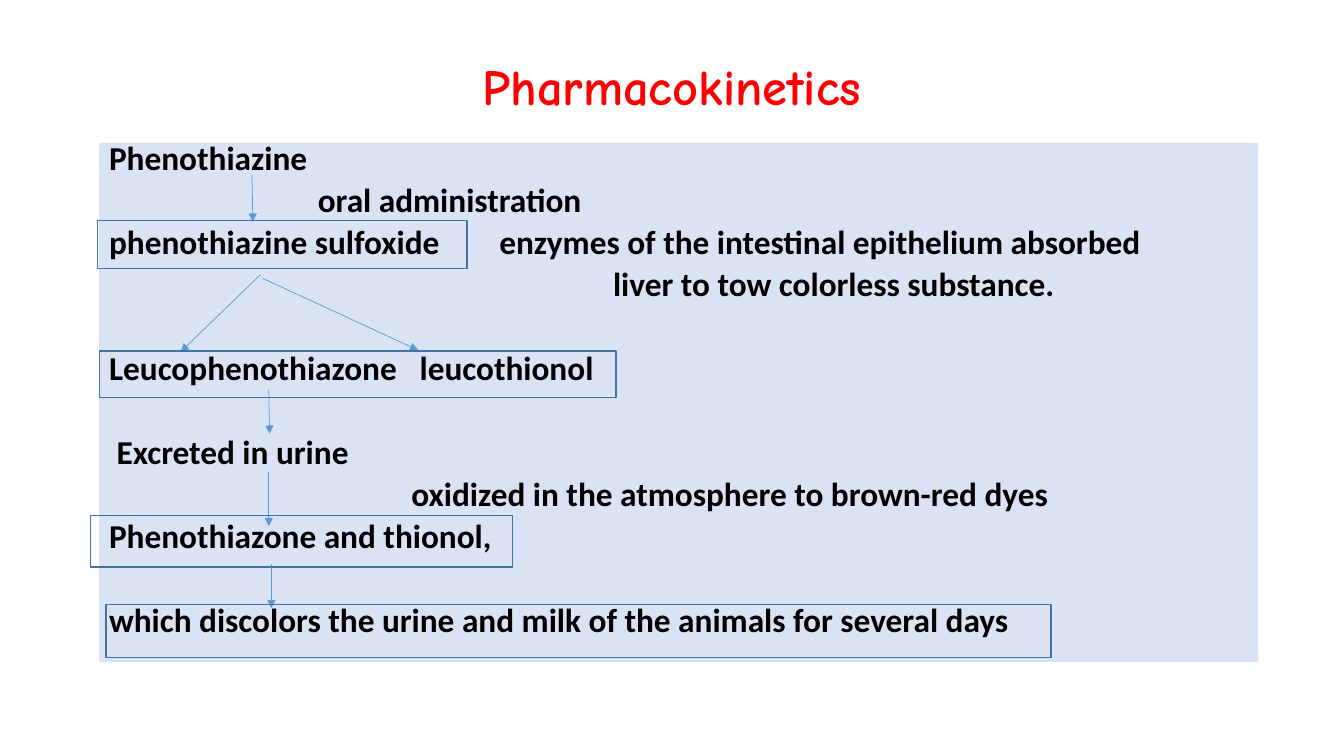
from dataclasses import dataclass

from lxml.etree import SubElement
from pptx import Presentation
from pptx.dml.color import RGBColor
from pptx.enum.shapes import MSO_CONNECTOR as Connector, MSO_SHAPE as Shape
from pptx.enum.text import MSO_ANCHOR as Anchor, PP_ALIGN as Align
from pptx.oxml.ns import qn
from pptx.util import Inches, Pt

COLORS = {"panel": "DAE3F3", "title": "FF0000", "text": "000000",
          "arrow": "5B9BD5", "frame": "43739E"}

# The slide is a grid of 32 columns by 18 rows; each text line takes one row
COLUMNS, ROWS = 32, 18
SLIDE_WIDTH, SLIDE_HEIGHT = Inches(13.33), Inches(7.5)
LINE_GAP = 10  # points before a text line
ROW_POINTS = 30


@dataclass(frozen=True)
class Area:
    col: float
    row: float
    cols: float
    rows: float


@dataclass(frozen=True)
class Arrow:
    start: tuple[float, float]
    end: tuple[float, float]


@dataclass(frozen=True)
class Step:
    text: str
    indent: float = 0
    aside: str = ""
    aside_gap: float = 0  # points added to the space before the aside
    skipped_rows: int = 0


TITLE = Area(2.2, 0.96, 27.6, 2.33)
PANEL = Area(2.36, 3.4, 27.6, 12.36)

STEPS = [
    Step("Phenothiazine"),
    Step("oral administration", indent=4.97),
    Step("phenothiazine sulfoxide", aside_gap=37.5,
         aside="enzymes of the intestinal epithelium absorbed"),
    Step("liver to tow colorless substance.", indent=12),
    Step("Leucophenothiazone", aside="leucothionol", aside_gap=11, skipped_rows=1),
    Step("Excreted in urine", indent=0.18, skipped_rows=1),
    Step("oxidized in the atmosphere to brown-red dyes", indent=7.2),
    Step("Phenothiazone and thionol,"),
    Step("which discolors the urine and milk of the animals for several days", skipped_rows=1),
]

ARROWS = [
    Arrow((6, 4.15), (6.02, 5.28)),
    Arrow((6.2, 6.54), (4.3, 8.38)),
    Arrow((6.26, 6.63), (9.96, 8.34)),
    Arrow((6.4, 9.27), (6.42, 10.33)),
    Arrow((6.4, 11.24), (6.4, 12.53)),
    Arrow((6.46, 13.42), (6.46, 14.48)),
]

FRAMES = [
    Area(2.32, 5.25, 8.8, 1.15),
    Area(2.37, 8.36, 12.3, 1.1),
    Area(2.15, 12.27, 10.05, 1.23),
    Area(2.52, 14.4, 22.5, 1.26),
]


def x(cols: float) -> int:
    return round(SLIDE_WIDTH * cols / COLUMNS)


def y(rows: float) -> int:
    return round(SLIDE_HEIGHT * rows / ROWS)


def place(area: Area) -> tuple[int, int, int, int]:
    return x(area.col), y(area.row), x(area.cols), y(area.rows)


def color(name: str) -> RGBColor:
    return RGBColor.from_string(COLORS[name])


def set_font(paragraph, face: str, size: float, color_name: str) -> None:
    font = paragraph.font
    font.name, font.size, font.bold = face, Pt(size), True
    font.color.rgb = color(color_name)


def add_title(slide, text: str) -> None:
    frame = slide.shapes.add_textbox(*place(TITLE)).text_frame
    frame.word_wrap = True
    frame.vertical_anchor = Anchor.MIDDLE
    heading = frame.paragraphs[0]
    heading.text = text
    heading.alignment = Align.CENTER
    heading.line_spacing = 0.9
    set_font(heading, "Comic Neue", 36, "title")


def add_aside(line, step: Step) -> None:
    """Put the aside after one space, widened by character spacing."""
    gap = line.add_run()
    gap.text = " "
    gap._r.get_or_add_rPr().set("spc", str(round(step.aside_gap * 100)))
    line.add_run().text = step.aside


def add_panel(slide, steps: list[Step]) -> None:
    panel = slide.shapes.add_shape(Shape.RECTANGLE, *place(PANEL))
    panel.shadow.inherit = False
    panel.fill.solid()
    panel.fill.fore_color.rgb = color("panel")
    panel.line.fill.background()
    frame = panel.text_frame
    frame.word_wrap = True
    frame.vertical_anchor = Anchor.TOP
    for index, step in enumerate(steps):
        line = frame.add_paragraph() if index else frame.paragraphs[0]
        line.text = step.text
        if step.aside:
            add_aside(line, step)
        line.alignment = Align.LEFT
        line.line_spacing = 0.7
        if index:
            line.space_before = Pt(LINE_GAP + ROW_POINTS * step.skipped_rows)
        properties = line._p.get_or_add_pPr()
        properties.set("marL", str(x(step.indent)))
        properties.set("indent", "0")
        set_font(line, "Calibri", 23.8, "text")


def add_arrow(slide, arrow: Arrow) -> None:
    (start_col, start_row), (end_col, end_row) = arrow.start, arrow.end
    connector = slide.shapes.add_connector(
        Connector.STRAIGHT, x(start_col), y(start_row), x(end_col), y(end_row))
    connector.line.color.rgb = color("arrow")
    connector.line.width = Pt(0.5)
    SubElement(connector.line._get_or_add_ln(), qn("a:tailEnd"), type="triangle")
    SubElement(connector._element.spPr, qn("a:effectLst"))


def add_frame(slide, area: Area) -> None:
    outline = slide.shapes.add_shape(Shape.RECTANGLE, *place(area))
    outline.shadow.inherit = False
    outline.fill.background()
    outline.line.color.rgb = color("frame")
    outline.line.width = Pt(1)


def main() -> None:
    deck = Presentation()
    deck.slide_width, deck.slide_height = SLIDE_WIDTH, SLIDE_HEIGHT
    slide = deck.slides.add_slide(deck.slide_layouts[6])

    # Text panel with the metabolic steps
    add_panel(slide, STEPS)

    # Arrows from step to step
    for arrow in ARROWS:
        add_arrow(slide, arrow)

    # Title and the frames around the substances
    add_title(slide, "Pharmacokinetics")
    for area in FRAMES:
        add_frame(slide, area)

    deck.save("out.pptx")


if __name__ == "__main__":
    main()
